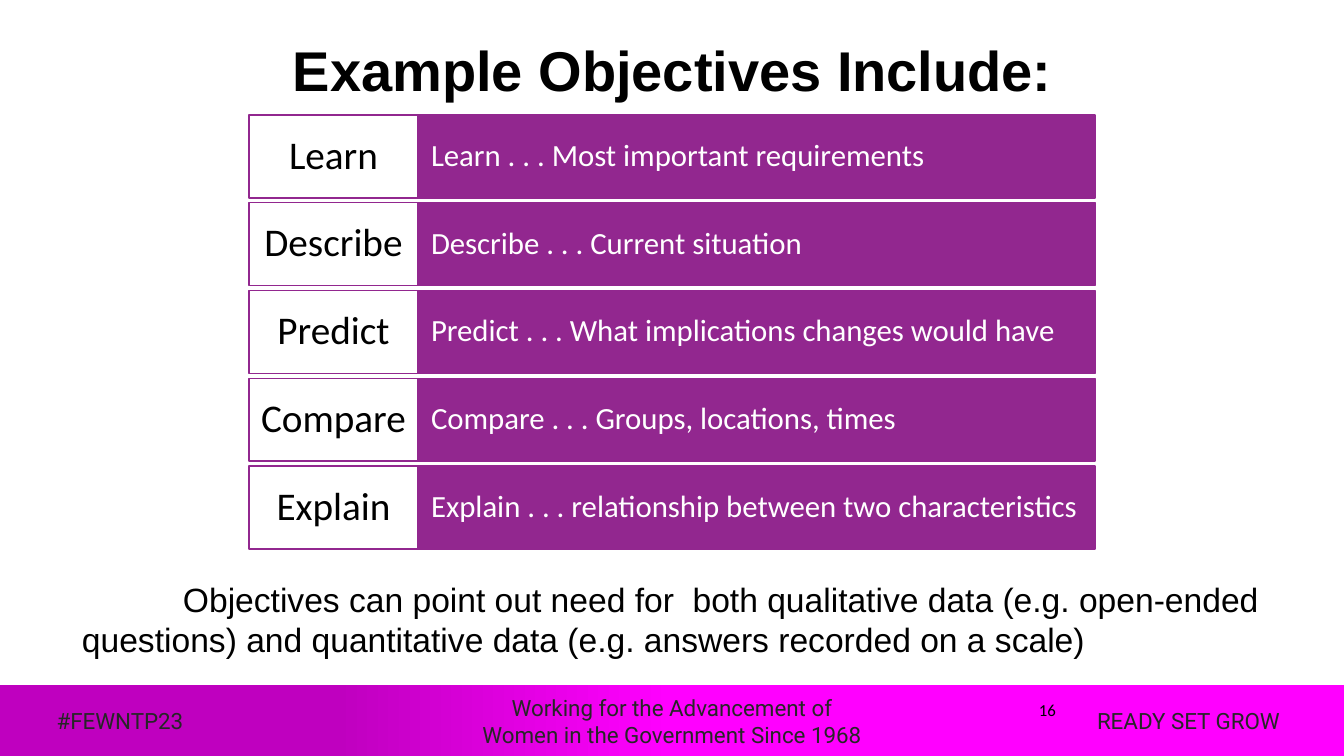
from lxml import etree
from pptx import Presentation
from pptx.dml.color import RGBColor
from pptx.enum import shapes, text
from pptx.oxml.ns import qn
from pptx.util import Pt

# Content
TITLE = "Example Objectives Include:"
OBJECTIVES = [
    ("Learn", "Learn . . . Most important requirements"),
    ("Describe", "Describe . . . Current situation"),
    ("Predict", "Predict . . . What implications changes would have"),
    ("Compare", "Compare . . . Groups, locations, times"),
    ("Explain", "Explain . . . relationship between two characteristics"),
]
SUMMARY = ("Objectives can point out need for  both qualitative data (e.g. open-ended "
           "questions) and quantitative data (e.g. answers recorded on a scale)")
FOOTERS = [  # left, width, alignment, lines
    (36, 168, "CENTER", ["#FEWNTP23"]),
    (443, 458, "CENTER", ["Working for the Advancement of",
                          "Women in the Government Since 1968"]),
    (1077, 231, "LEFT", ["READY SET GROW"]),
]
PAGE_NUMBER = "16"

# Style, lengths in px
PURPLE, WHITE, BLACK, GREY = "92278F", "FFFFFF", "000000", "262626"
BAND_STOPS = [(0, "BF00BF"), (25, "BF00BF"), (50, "FF00FF"), (100, "FF00FF")]
PAGE_WIDTH, PAGE_HEIGHT = 1344, 756
FIRST_TOP, LAST_TOP, ROW_HEIGHT = 115, 466, 83
LABEL_LEFT, LABEL_WIDTH, DETAIL_WIDTH = 249, 169, 677


def px(length):
    return round(length * 914400 / 100.8)


def color(value):
    return RGBColor.from_string(value)


def write(box, lines, size, font, ink, align="LEFT", anchor="TOP",
          insets=(10, 5), spacing=None, bold=False, wrap=True):
    frame = box.text_frame
    frame.word_wrap = wrap
    frame.vertical_anchor = text.MSO_ANCHOR[anchor]
    frame.margin_left = frame.margin_right = px(insets[0])
    frame.margin_top = frame.margin_bottom = px(insets[1])
    frame.text = "\n".join(lines)
    for para in frame.paragraphs:
        para.alignment = text.PP_ALIGN[align]
        para.line_spacing = spacing
        para.font.size = Pt(size)
        para.font.name = font
        para.font.bold = bold
        para.font.color.rgb = color(ink)
    return frame


def add_text(page, place, lines, size, font, ink, **style):
    box = page.shapes.add_textbox(*map(px, place))
    return write(box, lines, size, font, ink, **style)


def add_rectangle(page, place):
    box = page.shapes.add_shape(shapes.MSO_SHAPE.RECTANGLE, *map(px, place))
    box.shadow.inherit = False
    return box


def add_cell(page, place, fill, words, size, ink, **style):
    box = add_rectangle(page, place)
    box.fill.solid()
    box.fill.fore_color.rgb = color(fill)
    box.line.color.rgb = color(PURPLE)
    box.line.width = Pt(1)
    write(box, [words], size, "Calibri", ink, anchor="MIDDLE", spacing=0.9, **style)


def add_band(page):
    band = add_rectangle(page, (0, 685, PAGE_WIDTH, PAGE_HEIGHT - 685))
    band.line.fill.background()
    band.fill.gradient()
    band.fill.gradient_angle = 0
    stops = band.fill._fill._gradFill.find(qn("a:gsLst"))
    for stop in list(stops):
        stops.remove(stop)
    for percent, value in BAND_STOPS:
        stop = etree.SubElement(stops, qn("a:gs"), pos=str(percent * 1000))
        etree.SubElement(stop, qn("a:srgbClr"), val=value)


def main():
    deck = Presentation()
    deck.slide_width, deck.slide_height = px(PAGE_WIDTH), px(PAGE_HEIGHT)
    page = deck.slides.add_slide(deck.slide_layouts[6])

    # Footer band
    add_band(page)
    for left, width, align, lines in FOOTERS:
        add_text(page, (left, 700, width, 42), lines, 16, "Roboto", GREY,
                 align=align, anchor="MIDDLE", insets=(20, 20), wrap=False)

    # Summary with an indented first line
    summary = add_text(page, (72, 574, 1250, 92), [SUMMARY], 24, "Arial", BLACK)
    summary.paragraphs[0]._p.get_or_add_pPr().set("indent", str(px(101)))

    # Title
    add_text(page, (293, 28, 847, 172), [TITLE], 40, "Arial", BLACK,
             insets=(0, 15), spacing=0.9, bold=True)

    # Objective rows
    step = (LAST_TOP - FIRST_TOP) / (len(OBJECTIVES) - 1)
    for row, (label, detail) in enumerate(OBJECTIVES):
        top = FIRST_TOP + row * step
        add_cell(page, (LABEL_LEFT + LABEL_WIDTH, top, DETAIL_WIDTH, ROW_HEIGHT),
                 PURPLE, detail, 22, WHITE, insets=(13, 21))
        add_cell(page, (LABEL_LEFT, top, LABEL_WIDTH, ROW_HEIGHT),
                 WHITE, label, 28, BLACK, align="CENTER", insets=(9, 8))

    # Page number
    add_text(page, (1029, 695, 121, 30), [PAGE_NUMBER], 12, "Calibri", BLACK)

    deck.save("out.pptx")


if __name__ == "__main__":
    main()
